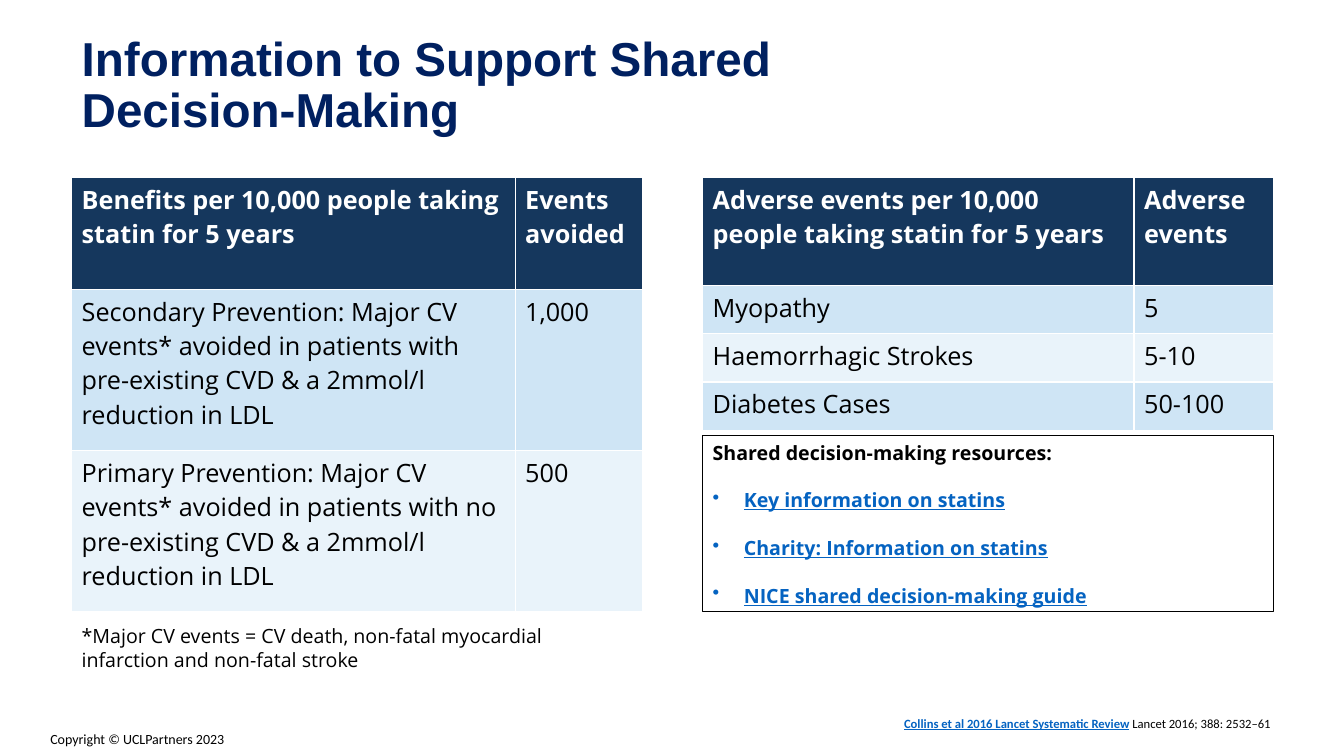
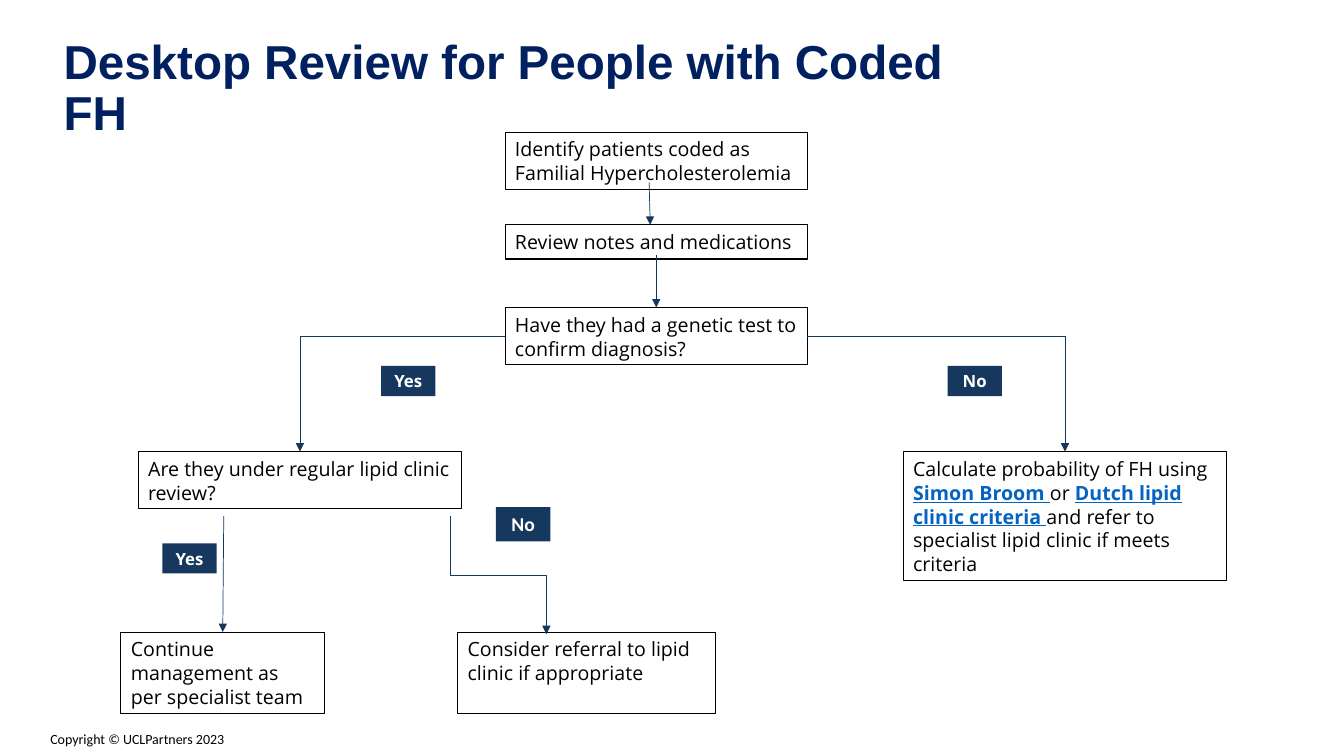
"""Build two slides on statins and a desktop review, placed by shares of the slide size."""
import pptx
import pptx.util
import pptx.dml.color
import pptx.enum.dml
import pptx.enum.shapes
import pptx.enum.text
import pptx.oxml
import pptx.oxml.ns

Pt = pptx.util.Pt
RGB = pptx.dml.color.RGBColor
KIND = pptx.enum.shapes.MSO_CONNECTOR
ALIGN = pptx.enum.text.PP_ALIGN
ANCHOR = pptx.enum.text.MSO_ANCHOR
qn = pptx.oxml.ns.qn
NS = pptx.oxml.ns.nsdecls("a")

NAVY = RGB(0x00, 0x20, 0x60)
DEEP = RGB(0x15, 0x37, 0x5D)
TAG = RGB(0x16, 0x38, 0x5E)
PALE = RGB(0xCF, 0xE5, 0xF5)
LIGHT = RGB(0xE9, 0xF3, 0xFA)
LINK = RGB(0x05, 0x63, 0xC1)
WHITE = RGB(0xFF, 0xFF, 0xFF)
BLACK = RGB(0x00, 0x00, 0x00)
SANS = "Open Sans"

deck = pptx.Presentation()
deck.slide_width = pptx.util.Inches(13.33)
deck.slide_height = pptx.util.Inches(7.5)
COL = deck.slide_width / 100
ROW = deck.slide_height / 100


def write(par, text, size=14, color=BLACK, bold=False, face=SANS, under=False):
    """Add one styled run to a paragraph."""
    run = par.add_run()
    run.text = text
    font = run.font
    font.name, font.size, font.bold, font.underline = face, Pt(size), bold, under
    font.color.rgb = color


def box(page, spot, fill=None, line=BLACK, plain=False, pitch=17):
    """Add a box at a spot of column, row, width and height; return it and its paragraph."""
    left, top, wide, high = spot
    place = int(left * COL), int(top * ROW), int(wide * COL), int(high * ROW)
    if plain:
        shape = page.shapes.add_textbox(*place)
    else:
        shape = page.shapes.add_shape(pptx.enum.shapes.MSO_SHAPE.RECTANGLE, *place)
        shape.shadow.inherit = False
        if fill is None:
            shape.fill.background()
        else:
            shape.fill.solid()
            shape.fill.fore_color.rgb = fill
        if line is None:
            shape.line.fill.background()
        else:
            shape.line.color.rgb = line
            shape.line.width = Pt(0.75)
    frame = shape.text_frame
    frame.word_wrap = True
    frame.vertical_anchor = ANCHOR.TOP
    par = frame.paragraphs[0]
    par.alignment = ALIGN.LEFT
    par.line_spacing = Pt(pitch)
    return shape, par


layout = deck.slide_layouts[5]
heads = [
    (["Information to Support Shared ", "Decision-Making"], (5.33, 4, 77.03, 16.53)),
    (["Desktop Review for People with Coded FH"], (3.98, 4.4, 72.3, 7.47)),
]
pages = []
for lines, (left, top, wide, high) in heads:
    page = deck.slides.add_slide(layout)
    title = page.shapes.title
    title.left, title.top = int(left * COL), int(top * ROW)
    title.width, title.height = int(wide * COL), int(high * ROW)
    frame = title.text_frame
    frame.word_wrap = True
    frame.vertical_anchor = ANCHOR.TOP
    frame.auto_size = pptx.enum.text.MSO_AUTO_SIZE.NONE
    par = frame.paragraphs[0]
    par.alignment = ALIGN.LEFT
    par.line_spacing = 0.9
    for count, text in enumerate(lines):
        if count:
            par.add_line_break()
        write(par, text, 34, NAVY, True, "Arial")
    pages.append(page)
facts, flow = pages

foot, par = box(facts, (3, 96, 14.7, 3.6), plain=True, pitch=12)
foot.text_frame.word_wrap = False
write(par, "Copyright © UCLPartners 2023", 10, face="Calibri")
layout.shapes.element.append(foot.element)

tables = [
    (5.33, [33, 9.45], [14.8, 21.33, 21.33], [
        ["Benefits per 10,000 people taking statin for 5 years", "Events avoided"],
        ["Secondary Prevention: Major CV \nevents* avoided in patients with pre-existing CVD & a 2mmol/l reduction in LDL ", "1,000"],
        ["Primary Prevention: Major CV events* avoided in patients with no pre-existing CVD & a 2mmol/l reduction in LDL ", "500"],
    ]),
    (52.28, [32.1, 10.35], [14.27, 6.4, 6.4, 6.4], [
        ["Adverse events per 10,000 people taking statin for 5 years", "Adverse events"],
        ["Myopathy", "5"],
        ["Haemorrhagic Strokes", "5-10"],
        ["Diabetes Cases", "50-100"],
    ]),
]
for left, cols, rows, data in tables:
    table = facts.shapes.add_table(
        len(rows), len(cols), int(left * COL), int(23.47 * ROW),
        int(sum(cols) * COL), int(sum(rows) * ROW)).table
    for col, wide in zip(table.columns, cols):
        col.width = int(wide * COL)
    for r, high in enumerate(rows):
        table.rows[r].height = int(high * ROW)
        for c, text in enumerate(data[r]):
            cell = table.cell(r, c)
            cell.fill.solid()
            cell.fill.fore_color.rgb = DEEP if r == 0 else (LIGHT, PALE)[r % 2]
            for count, part in enumerate(text.split("\n")):
                frame = cell.text_frame
                par = frame.add_paragraph() if count else frame.paragraphs[0]
                write(par, part, 18, BLACK if r else WHITE, r == 0)

guide, par = box(facts, (52.28, 57.6, 42.45, 23.33))
write(par, "Shared decision-making resources:", bold=True)
for text in ["Key information on statins", "Charity: Information on statins",
             "NICE shared decision-making guide"]:
    par = guide.text_frame.add_paragraph()
    par.alignment = ALIGN.LEFT
    par.line_spacing = par.space_before = Pt(17)
    props = par._p.get_or_add_pPr()
    props.set("marL", str(pptx.util.Inches(0.31)))
    props.set("indent", str(-pptx.util.Inches(0.31)))
    props.append(pptx.oxml.parse_xml(f'<a:buChar {NS} char="•"/>'))
    write(par, text, color=LINK, bold=True, under=True)

note, par = box(facts, (5.33, 81.87, 39.9, 7.6), plain=True)
write(par, "*Major CV events = CV death, non-fatal myocardial infarction and non-fatal stroke")
cite, par = box(facts, (66.53, 94, 30.15, 3.33), plain=True, pitch=11)
write(par, "Collins et al 2016 Lancet Systematic Review", 9, LINK, True, "Calibri", True)
write(par, " ", 9, face="Calibri")
write(par, "Lancet 2016; 388: 2532–61", 9, face="Calibri")

steps = {
    "start": ((37.58, 17.47, 22.5, 7.6), "Identify patients coded as Familial Hypercholesterolemia"),
    "notes": ((37.58, 29.73, 22.5, 4.53), "Review notes and medications"),
    "test": ((37.58, 40.67, 22.5, 7.6), "Have they had a genetic test to confirm diagnosis?"),
    "clinic": ((10.28, 59.73, 24.08, 7.6), "Are they under regular lipid clinic review?"),
    "score": ((67.2, 59.73, 24.08, 17.07), "Calculate probability of FH using "),
    "stay": ((9, 83.6, 15.15, 10.8), "Continue management as per specialist team"),
    "refer": ((34.05, 83.6, 19.2, 10.8), "Consider referral to lipid clinic if appropriate"),
}
nodes = {}
for name, (spot, text) in steps.items():
    nodes[name], par = box(flow, spot)
    write(par, text)
par = nodes["score"].text_frame.paragraphs[0]
write(par, "Simon Broom", color=LINK, bold=True, under=True)
write(par, " ", color=LINK, under=True)
write(par, "or ")
write(par, "Dutch lipid clinic criteria ", color=LINK, bold=True, under=True)
write(par, "and refer to specialist lipid clinic if meets criteria")

tags = [
    ("Yes", 28.35, 48.4, 4, 12, SANS),
    ("Yes", 12.08, 71.87, 4, 12, SANS),
    ("No", 70.5, 48.4, 4, 12, SANS),
    ("No", 36.9, 67.07, 4.53, 14, "Calibri"),
]
for text, left, top, high, size, face in tags:
    tag, par = box(flow, (left, top, 4.05, high), TAG, None, pitch=size * 1.2)
    par.alignment = ALIGN.CENTER
    write(par, text, size, WHITE, True, face)

links = [
    (KIND.STRAIGHT, (48.3, 24.13, 48.38, 29.73), None, None),
    (KIND.STRAIGHT, (48.83, 33.73, 48.75, 40.67), None, ("test", 0)),
    (KIND.STRAIGHT, (16.65, 68.27, 16.65, 83.6), None, ("stay", 0)),
    (KIND.ELBOW, (37.58, 44.47, 22.32, 59.73), ("test", 1), ("clinic", 0)),
    (KIND.ELBOW, (60.08, 44.47, 79.24, 59.73), ("test", 3), ("score", 0)),
    (KIND.ELBOW, (41.48, 69.73, 32.7, 82.4), None, None),
]
for kind, (x1, y1, x2, y2), tail, head in links:
    link = flow.shapes.add_connector(
        kind, int(x1 * COL), int(y1 * ROW), int(x2 * COL), int(y2 * ROW))
    if tail:
        link.begin_connect(nodes[tail[0]], tail[1])
    if head:
        link.end_connect(nodes[head[0]], head[1])
    link.line.color.rgb = DEEP
    link.line.width = Pt(0.5)
    props = link.element.spPr
    props.find(qn("a:ln")).append(pptx.oxml.parse_xml(f'<a:tailEnd {NS} type="triangle"/>'))
    props.append(pptx.oxml.parse_xml(f"<a:effectLst {NS}/>"))
    if kind == KIND.ELBOW and tail:
        props.find(qn("a:prstGeom")).set("prst", "bentConnector2")
    elif kind == KIND.ELBOW:
        props.find(qn("a:xfrm")).set("rot", str(270 * 60000))

deck.save("out.pptx")
